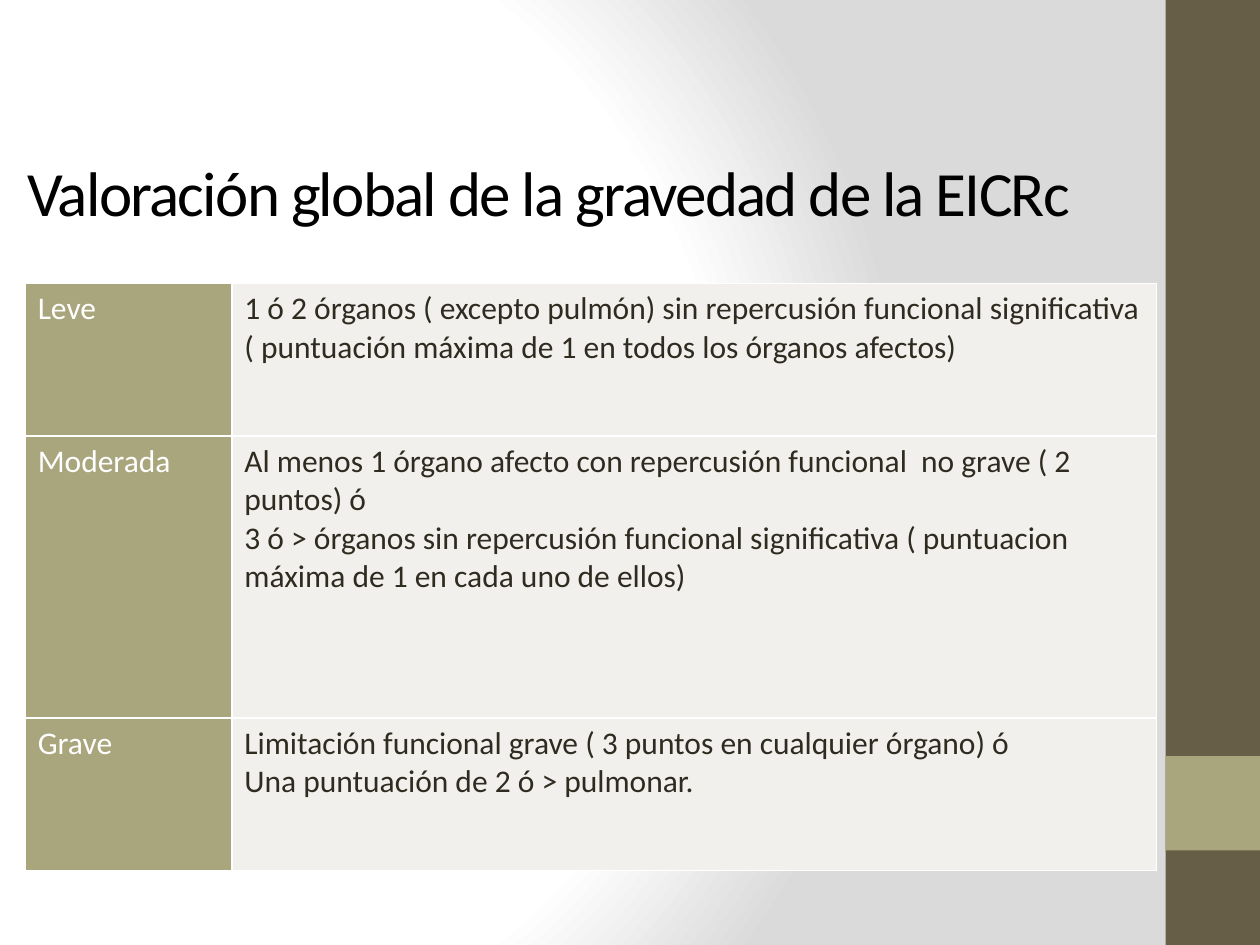
from pptx import Presentation
from pptx import util as u
from pptx import oxml as ox
from pptx.dml import color as col
from pptx.enum import shapes, text
from pptx.oxml import ns

# Content
TITLE = "Valoración global de la gravedad de la EICRc"
GRADES = [
    ("Leve", ["1 ó 2 órganos ( excepto pulmón) sin repercusión funcional significativa "
              "( puntuación máxima de 1 en todos los órganos afectos)"]),
    ("Moderada", ["Al menos 1 órgano afecto con repercusión funcional  no grave ( 2 puntos) ó",
                  "3 ó > órganos sin repercusión funcional significativa "
                  "( puntuacion máxima de 1 en cada uno de ellos)"]),
    ("Grave", ["Limitación funcional grave ( 3 puntos en cualquier órgano) ó",
               "Una puntuación de 2 ó > pulmonar."]),
]

THEME = {
    "font": "Calibri", "title": 36, "body": 18, "rule": 1,
    "black": "000000", "white": "FFFFFF", "ink": "2F2B20",
    "brown": "675E47", "olive": "A9A57C", "pale": "F1F0EC", "grey": "DADADA",
}

# Layout in inches
WIDE, HIGH = 10, 7.5
BAND = WIDE * 0.075
LEFT, TOP = 0.2, 2.25
COLS = [1.64, 7.34]
ROWS = [1.21, 2.24, 1.21]


def rgb(key):
    return col.RGBColor.from_string(THEME[key])


def box(*lens):
    return [u.Inches(n) for n in lens]


def write(para, words, size, key):
    run = para.add_run()
    run.text = words
    run.font.name = THEME["font"]
    run.font.size = u.Pt(THEME[size])
    run.font.color.rgb = rgb(key)
    return run


def back(slide):
    """Fill the slide with a round gradient."""
    slide.background.fill.solid()
    frame = slide.element.find(".//" + ns.qn("p:bgPr"))
    stops = "".join(
        f'<a:gs pos="{pos * 1000}"><a:srgbClr val="{THEME[key]}"/></a:gs>'
        for pos, key in [(0, "white"), (75, "white"), (100, "grey")])
    grad = ox.parse_xml(
        f'<a:gradFill {ns.nsdecls("a")} rotWithShape="1"><a:gsLst>{stops}</a:gsLst>'
        '<a:path path="circle"><a:fillToRect l="20000" t="50000" r="100000" b="50000"/>'
        '</a:path></a:gradFill>')
    frame.replace(frame[0], grad)


def block(slide, top, high, key):
    """Draw one part of the right-hand band."""
    part = slide.shapes.add_shape(
        shapes.MSO_SHAPE.RECTANGLE, *box(WIDE - BAND, top, BAND, high))
    part.shadow.inherit = False
    part.fill.solid()
    part.fill.fore_color.rgb = rgb(key)
    part.line.fill.background()


def head(slide):
    frame = slide.shapes.add_textbox(*box(0.12, 0.98, 9.1, 1.08)).text_frame
    frame.word_wrap = True
    frame.vertical_anchor = text.MSO_ANCHOR.MIDDLE
    run = write(frame.paragraphs[0], TITLE, "title", "black")
    run.font._element.set("spc", "-100")


def edge(cell):
    """Rule all four sides of a cell; borders come before the fill."""
    props = cell._tc.get_or_add_tcPr()
    for spot, side in enumerate(("lnL", "lnR", "lnT", "lnB")):
        props.insert(spot, ox.parse_xml(
            f'<a:{side} {ns.nsdecls("a")} w="{u.Pt(THEME["rule"])}"><a:solidFill>'
            f'<a:srgbClr val="{THEME["white"]}"/></a:solidFill></a:{side}>'))


def fill(cell, lines, ink, shade):
    cell.fill.solid()
    cell.fill.fore_color.rgb = rgb(shade)
    edge(cell)
    frame = cell.text_frame
    for i, line in enumerate(lines):
        para = frame.add_paragraph() if i else frame.paragraphs[0]
        write(para, line, "body", ink)


def grid(slide):
    table = slide.shapes.add_table(
        len(ROWS), len(COLS), *box(LEFT, TOP, sum(COLS), sum(ROWS))).table
    table.first_row = table.horz_banding = False
    for part, wide in zip(table.columns, COLS):
        part.width = u.Inches(wide)
    for part, high, (grade, lines) in zip(table.rows, ROWS, GRADES):
        part.height = u.Inches(high)
        name, note = part.cells
        fill(name, [grade], "white", "olive")
        fill(note, lines, "ink", "pale")


def main():
    deck = Presentation()
    deck.slide_width, deck.slide_height = box(WIDE, HIGH)
    slide = deck.slides.add_slide(deck.slide_layouts[6])
    back(slide)
    block(slide, 0, HIGH, "brown")
    block(slide, HIGH * 0.8, BAND, "olive")
    head(slide)
    grid(slide)
    deck.save("out.pptx")


if __name__ == "__main__":
    main()
